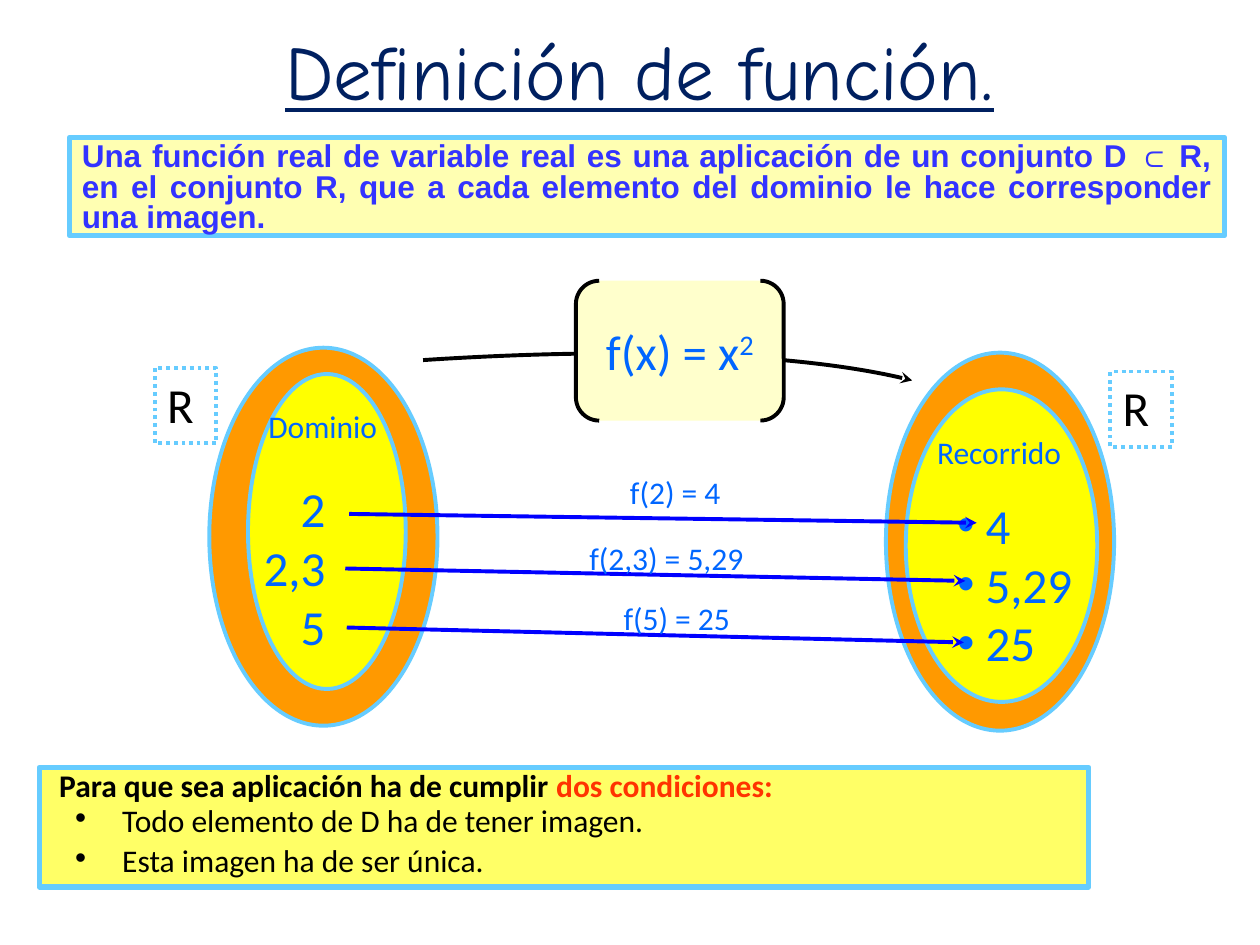
from lxml import etree
from pptx import Presentation
from pptx.dml.color import RGBColor
from pptx.enum.dml import MSO_LINE
from pptx.enum.shapes import MSO_CONNECTOR, MSO_SHAPE as Shape
from pptx.enum.text import MSO_ANCHOR as Anchor, MSO_AUTO_SIZE as AutoSize, PP_ALIGN as Align
from pptx.oxml.ns import qn
from pptx.util import Cm, Pt

COLOURS = {
    "navy": "002060", "sky": "66CCFF", "orange": "FF9900", "yellow": "FFFF00",
    "lemon": "FFFF66", "cream": "FFFFCC", "black": "000000", "red": "FF3300",
    "violet": "3333FF", "blue": "0066FF", "arrow": "0000FF",
}


def colour(name):
    return RGBColor.from_string(COLOURS[name])


def style_span(span, size, ink, font="Calibri", bold=False):
    span.font.size, span.font.name, span.font.bold = Pt(size), font, bold
    span.font.color.rgb = colour(ink)


def outline(item, ink, width=2.25):
    item.line.color.rgb = colour(ink)
    item.line.width = Pt(width)


def add_shape(page, kind, box, fill=None, line="sky", width=2.25):
    shape = page.shapes.add_shape(kind, *map(Cm, box))
    shape.shadow.inherit = False
    if fill:
        shape.fill.solid()
        shape.fill.fore_color.rgb = colour(fill)
    else:
        shape.fill.background()
    outline(shape, line, width)
    return shape


def write(shape, text, size, ink, align=Align.LEFT, anchor=Anchor.TOP, **font):
    frame = shape.text_frame
    frame.word_wrap, frame.vertical_anchor = True, anchor
    frame.text = text
    for para in frame.paragraphs:
        para.alignment = align
        for span in para.runs:
            style_span(span, size, ink, **font)
    return frame


def add_label(page, box, text, size, align=Align.LEFT):
    return write(page.shapes.add_textbox(*map(Cm, box)), text, size, "blue", align)


def set_bullet(para, margin, indent):
    props = para._p.get_or_add_pPr()
    props.set("marL", str(Cm(margin)))
    props.set("indent", str(Cm(indent)))
    if indent:
        font = etree.SubElement(props, qn("a:buFont"))
        font.set("typeface", "Arial")
        etree.SubElement(props, qn("a:buChar")).set("char", "•")
    else:
        etree.SubElement(props, qn("a:buNone"))


def add_arrowhead(item):
    line = item.line._get_or_add_ln()
    etree.SubElement(line, qn("a:tailEnd")).set("type", "stealth")


def place(shape, box):
    shape.left, shape.top, shape.width, shape.height = map(Cm, box)


def add_title(page, box):
    title = page.shapes.title
    place(title, box)
    frame = write(title, "Definición de función.", 44, "navy", Align.CENTER,
                  Anchor.MIDDLE, font="Comic Neue")
    frame.auto_size = AutoSize.NONE
    frame.paragraphs[0].runs[0].font.underline = True


def add_definition(page, box):
    panel = add_shape(page, Shape.RECTANGLE, box, "lemon", width=3)
    tint = panel.fill._xPr.find(qn("a:solidFill"))[0]
    etree.SubElement(tint, qn("a:alpha")).set("val", "50000")
    text = ("Una función real de variable real es una aplicación de un conjunto D ⊂ R, "
            "en el conjunto R, que a cada elemento del dominio le hace corresponder "
            "una imagen.")
    frame = write(panel, text, 18, "violet", Align.JUSTIFY, font="Arial", bold=True)
    frame.paragraphs[0].line_spacing = 0.8


def add_conditions(page, box):
    body = page.placeholders[1]
    place(body, box)
    body.fill.solid()
    body.fill.fore_color.rgb = colour("lemon")
    outline(body, "sky", 3)
    lines = ["Para que sea aplicación ha de cumplir ",
             "Todo elemento de D ha de tener imagen.", "Esta imagen ha de ser única."]
    frame = write(body, "\n".join(lines), 18, "black", anchor=Anchor.MIDDLE)
    frame.auto_size = AutoSize.NONE
    heading, *conditions = frame.paragraphs
    heading.runs[0].font.bold = True
    accent = heading.add_run()
    accent.text = "dos condiciones:"
    style_span(accent, 18, "red", bold=True)
    set_bullet(heading, 0.15, 0)
    heading.space_before = Pt(0)
    heading.line_spacing = 0.65
    for para, spacing in zip(conditions, (0.5, 0.65)):
        set_bullet(para, 1.42, -0.95)
        para.line_spacing = spacing
        para.space_before = Pt(9)


def add_set(page, box, inner, tag, name, values, align):
    """Each part is an offset (and size) within the outer ellipse's box."""
    left, top = box[:2]

    def within(x, y, width, height):
        return left + x, top + y, width, height

    add_shape(page, Shape.OVAL, box, "orange")
    frame = add_shape(page, Shape.RECTANGLE, within(*tag, 1.24, 1.52))
    frame.line.dash_style = MSO_LINE.ROUND_DOT
    write(frame, "R", 28, "black")
    add_shape(page, Shape.OVAL, within(*inner), "yellow")
    text, *name_box = name
    add_label(page, within(*name_box, 3.4, 1.09), text, 18)
    text, *values_box = values
    return add_label(page, within(*values_box, 3.8), text, 28, align)


def add_rule(page, box):
    left, top = box[:2]
    # Curved arrow passing behind the bracketed formula
    start, *controls = [(Cm(left + x), Cm(top + y)) for x, y in
                        ((-3.08, 1.6), (1.04, 1.33), (4.7, 1.48), (6.78, 2.01))]
    builder = page.shapes.build_freeform(*start)
    builder.add_line_segments(controls, close=False)
    curve = builder.convert_to_shape()
    curve.shadow.inherit = False
    curve.fill.background()
    outline(curve, "black")
    add_arrowhead(curve)
    route = next(curve._element.iter(qn("a:path")))
    segments = route.findall(qn("a:lnTo"))
    bezier = etree.SubElement(route, qn("a:cubicBezTo"))
    for segment in segments:
        bezier.append(segment[0])
        route.remove(segment)

    bracket = add_shape(page, Shape.DOUBLE_BRACKET, box, "cream", "black")
    frame = write(bracket, "f(x) = x", 28, "blue", Align.CENTER, Anchor.MIDDLE)
    frame.margin_left = frame.margin_right = 0
    power = frame.paragraphs[0].add_run()
    power.text = "2"
    style_span(power, 28, "blue")
    power._r.get_or_add_rPr().set("baseline", "30000")


def add_mappings(page, box):
    left, top = box[:2]
    mappings = [
        ("f(2) = 4", (5.49, 0), (0.08, 0.94), (12.73, 1.12)),
        ("f(2,3) = 5,29", (4.67, 1.32), (0, 2.04), (12.5, 2.29)),
        ("f(5) = 25", (5.36, 2.54), (0.03, 3.23), (12.47, 3.53)),
    ]
    for text, (x, y), start, end in mappings:
        ends = [Cm(value) for dx, dy in (start, end) for value in (left + dx, top + dy)]
        arrow = page.shapes.add_connector(MSO_CONNECTOR.STRAIGHT, *ends)
        outline(arrow, "arrow")
        add_arrowhead(arrow)
        etree.SubElement(arrow._element.spPr, qn("a:effectLst"))
        add_label(page, (left + x, top + y, 3.9, 1.02), text, 18)


def main():
    deck = Presentation()
    deck.slide_width, deck.slide_height = Cm(25.4), Cm(19.05)
    page = deck.slides.add_slide(deck.slide_layouts[1])

    add_title(page, (3.38, 0.41, 19.02, 1.98))
    add_definition(page, (1.4, 2.77, 23.29, 1.98))
    add_conditions(page, (0.79, 15.47, 21.16, 2.41))
    # Domain and range
    add_set(page, (4.22, 7.01, 4.6, 7.62), (0.78, 0.53, 3.18, 6.35), (-1.1, 0.41),
            ("Dominio", 0.94, 1.07), ("2\n2,3\n5", 0.61, 2.52, 1.98), Align.RIGHT)
    images = add_set(page, (17.86, 7.11, 4.6, 7.62), (0.4, 0.74, 3.86, 6.3), (4.52, 0.38),
                     ("Recorrido", 0.78, 1.5), ("4\n5,29\n25", 1.19, 2.75, 3.76), Align.LEFT)
    for para in images.paragraphs:
        set_bullet(para, 0.57, -0.57)
    # Formula and the three mapped values
    add_rule(page, (11.61, 5.66, 4.19, 2.82))
    add_mappings(page, (6.96, 9.42, 12.73, 3.56))
    deck.save("out.pptx")


if __name__ == "__main__":
    main()
